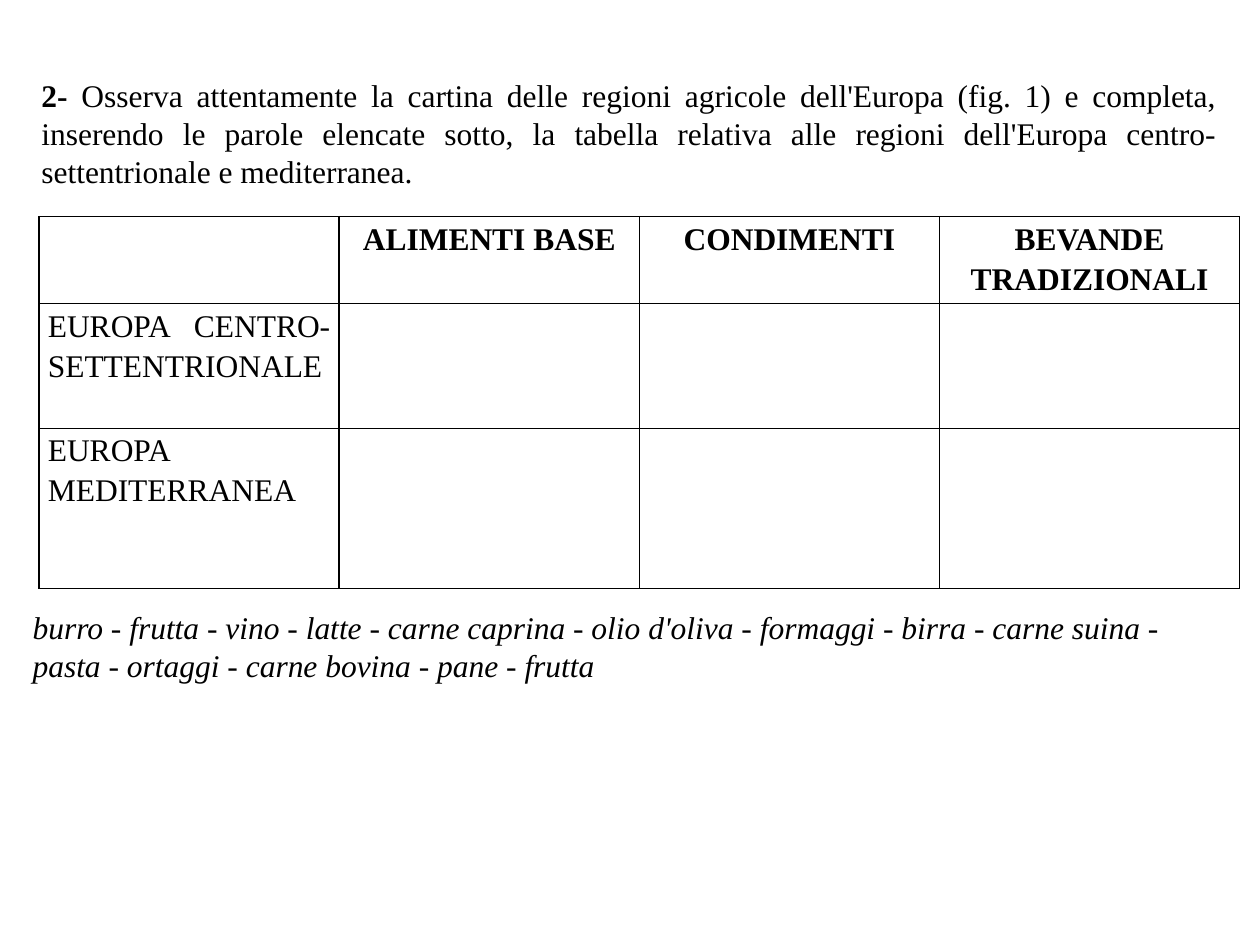
from lxml.etree import SubElement
from pptx import Presentation
from pptx.dml.color import RGBColor
from pptx.enum.text import MSO_ANCHOR, MSO_AUTO_SIZE, PP_ALIGN as Align
from pptx.oxml.ns import qn
from pptx.util import Inches, Pt

COLORS = {"ink": "000000", "paper": "FFFFFF"}
FONT = "Times New Roman"
W, H = 10, 7.5

HEADINGS = ["", "ALIMENTI BASE", "CONDIMENTI", "BEVANDE TRADIZIONALI"]
REGIONS = ["EUROPA CENTRO-SETTENTRIONALE", "EUROPA MEDITERRANEA"]
ROW_HEIGHTS = [0.69, 0.99, 1.27]
WORDS = ["burro", "frutta", "vino", "latte", "carne caprina", "olio d'oliva",
         "formaggi", "birra", "carne suina", "pasta", "ortaggi",
         "carne bovina", "pane", "frutta"]


def add_text(p, text, size=18, bold=False, italic=False, align=None):
    """Append a formatted run to a paragraph."""
    if align is not None:
        p.alignment = align
    r = p.add_run()
    r.text = text
    f = r.font
    f.name, f.size, f.bold, f.italic = FONT, Pt(size), bold, italic
    f.color.rgb = RGBColor.from_string(COLORS["ink"])


def add_box(s, box):
    """Add a wrapping text box and return its first paragraph."""
    tf = s.shapes.add_textbox(*map(Inches, box)).text_frame
    tf.word_wrap = True
    tf.auto_size = MSO_AUTO_SIZE.SHAPE_TO_FIT_TEXT
    tf.vertical_anchor = MSO_ANCHOR.MIDDLE
    return tf.paragraphs[0]


def style_cell(cell):
    """Give a cell thin borders on all sides and a plain fill."""
    pr = cell._tc.get_or_add_tcPr()
    for side in ("a:lnL", "a:lnR", "a:lnT", "a:lnB"):
        ln = SubElement(pr, qn(side), w=str(Pt(1)))
        fill = SubElement(ln, qn("a:solidFill"))
        SubElement(fill, qn("a:srgbClr"), val=COLORS["ink"])
    cell.fill.solid()
    cell.fill.fore_color.rgb = RGBColor.from_string(COLORS["paper"])
    cell.margin_left = cell.margin_right = Inches(0.07)
    cell.margin_top = cell.margin_bottom = 0


def add_question(s, box):
    p = add_box(s, box)
    add_text(p, "2- ", bold=True, align=Align.JUSTIFY)
    add_text(p, "Osserva attentamente la cartina delle regioni agricole "
             "dell'Europa (fig. 1) e completa, inserendo le parole elencate "
             "sotto, la tabella relativa alle regioni dell'Europa "
             "centro-settentrionale e mediterranea. ")


def add_food_table(s, box):
    rows = [HEADINGS] + [[region, "", "", ""] for region in REGIONS]
    table = s.shapes.add_table(len(rows), len(HEADINGS),
                               *map(Inches, box)).table
    table.horz_banding = False
    for col in table.columns:
        col.width = Inches(box[2] / len(HEADINGS))
    for i, texts in enumerate(rows):
        table.rows[i].height = Inches(ROW_HEIGHTS[i])
        for j, text in enumerate(texts):
            cell = table.cell(i, j)
            style_cell(cell)
            if text:
                p = cell.text_frame.paragraphs[0]
                p.line_spacing, p.space_after = 1.15, Pt(10)
                add_text(p, text, bold=i == 0,
                         align=Align.JUSTIFY if i else Align.CENTER)


def add_word_list(s, box):
    add_text(add_box(s, box), " - ".join(WORDS), italic=True)


def main():
    prs = Presentation()
    prs.slide_width, prs.slide_height = Inches(W), Inches(H)
    s = prs.slides.add_slide(prs.slide_layouts[6])

    table_width = 0.953 * W
    add_question(s, (0.023 * W, 0.55, table_width, 1.01))
    add_food_table(s, (0.031 * W, 1.72, table_width, sum(ROW_HEIGHTS)))
    add_word_list(s, (0.016 * W, 4.77, 0.969 * W, 0.71))
    prs.save("out.pptx")


if __name__ == "__main__":
    main()
